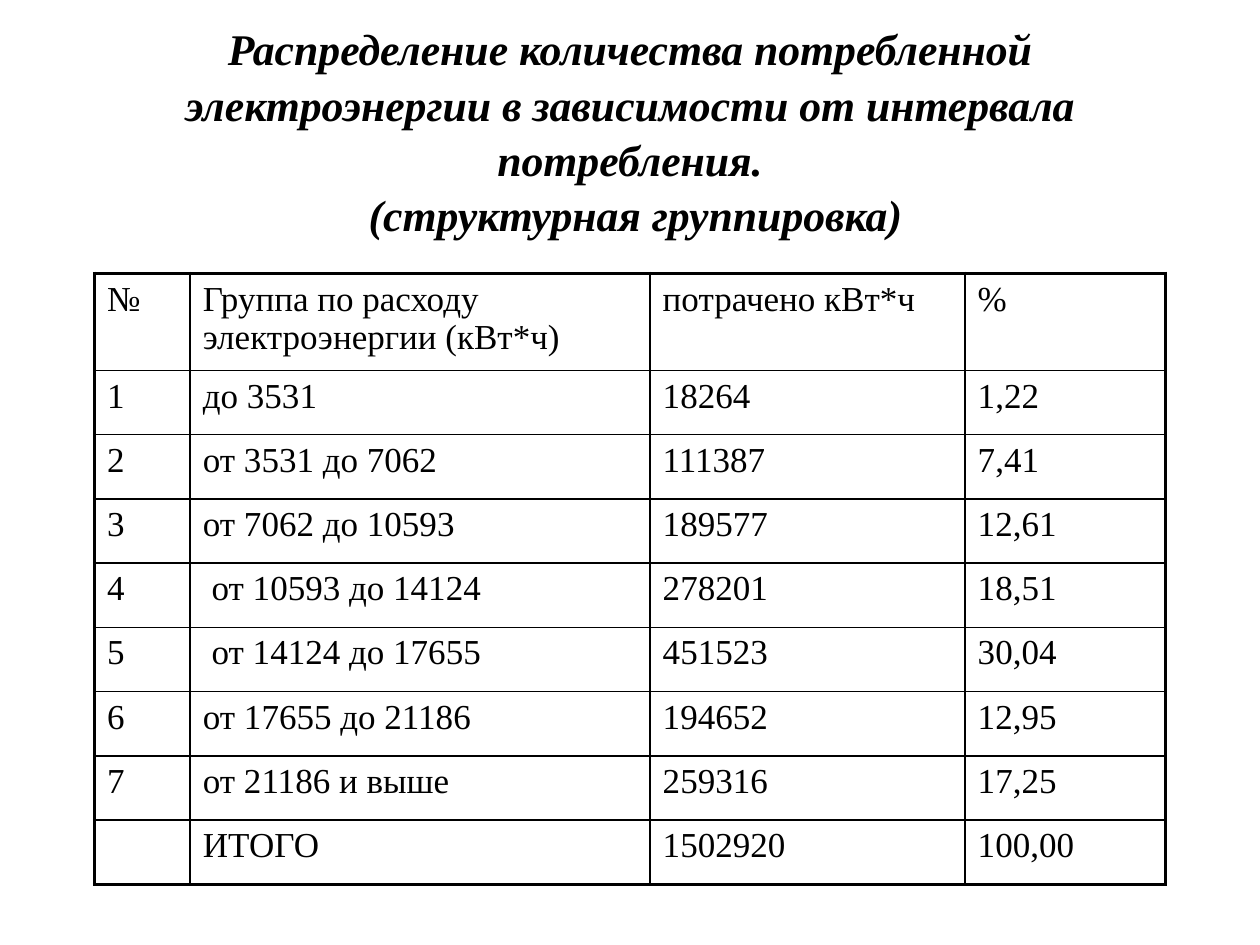
from pptx import Presentation
from pptx.dml.color import RGBColor
from pptx.enum import text
from pptx.oxml.ns import qn
from pptx.util import Inches, Pt
from lxml import etree

COLORS = {"ink": "000000"}
FONT = "Times New Roman"
THIN, THICK = 1, 2.25

TITLE = ("Распределение количества потребленной электроэнергии "
         "в зависимости от интервала потребления.\v (структурная группировка)")
COLUMN_WIDTHS = [0.76, 3.65, 2.5, 1.59]
HEADER_HEIGHT, ROW_HEIGHT = 0.77, 0.51
ROWS = [
    ("№", "Группа по расходу электроэнергии (кВт*ч)", "потрачено кВт*ч", "%"),
    ("1", "до 3531", "18264", "1,22"),
    ("2", "от 3531 до 7062", "111387", "7,41"),
    ("3", "от 7062 до 10593", "189577", "12,61"),
    ("4", " от 10593 до 14124", "278201", "18,51"),
    ("5", " от 14124 до 17655", "451523", "30,04"),
    ("6", "от 17655 до 21186", "194652", "12,95"),
    ("7", "от 21186 и выше", "259316", "17,25"),
    ("", "ИТОГО", "1502920", "100,00"),
]


def format_font(font, size, bold=False, italic=False):
    font.name, font.size = FONT, Pt(size)
    font.bold, font.italic = bold, italic
    font.color.rgb = RGBColor.from_string(COLORS["ink"])


def set_borders(cell, widths):
    """Draw the sides of a cell; widths maps L, R, T, B to points, in that order."""
    properties = cell._tc.get_or_add_tcPr()
    for side, width in widths.items():
        line = etree.SubElement(properties, qn(f"a:ln{side}"), w=str(Pt(width)))
        fill = etree.SubElement(line, qn("a:solidFill"))
        etree.SubElement(fill, qn("a:srgbClr"), val=COLORS["ink"])


def place_title(page, left, top, width, height):
    title = page.shapes.title
    title.left, title.top, title.width, title.height = left, top, width, height
    frame = title.text_frame
    frame.text = TITLE
    frame.word_wrap = True
    frame.auto_size = text.MSO_AUTO_SIZE.NONE
    frame.vertical_anchor = text.MSO_ANCHOR.MIDDLE
    para = frame.paragraphs[0]
    para.alignment = text.PP_ALIGN.CENTER
    para.line_spacing = 1.05
    for span in para.runs:
        format_font(span.font, 25, bold=True, italic=True)


def place_table(page, left, top, width, height):
    table = page.shapes.add_table(len(ROWS), len(COLUMN_WIDTHS),
                                  left, top, width, height).table
    table.first_row = table.horz_banding = False
    for column, column_width in zip(table.columns, COLUMN_WIDTHS):
        column.width = Inches(column_width)
    last_row, last_column = len(ROWS) - 1, len(COLUMN_WIDTHS) - 1
    for r, values in enumerate(ROWS):
        table.rows[r].height = Inches(ROW_HEIGHT if r else HEADER_HEIGHT)
        for c, value in enumerate(values):
            cell = table.cell(r, c)
            cell.text_frame.text = value
            para = cell.text_frame.paragraphs[0]
            format_font(para.font, 20)
            for span in para.runs:
                format_font(span.font, 20)
            outer = {"L": c == 0, "R": c == last_column,
                     "T": r == 0, "B": r == last_row}
            set_borders(cell, {side: THICK if edge else THIN
                               for side, edge in outer.items()})
            cell.fill.background()


def main():
    deck = Presentation()
    deck.slide_width, deck.slide_height = Inches(10), Inches(7.5)
    page = deck.slides.add_slide(deck.slide_layouts[5])
    place_title(page, Inches(0.75), Inches(0.28), Inches(8.5), Inches(1.5))
    place_table(page, Inches(0.75), Inches(2.17), Inches(8.5), Inches(4.82))
    deck.save("out.pptx")


if __name__ == "__main__":
    main()
